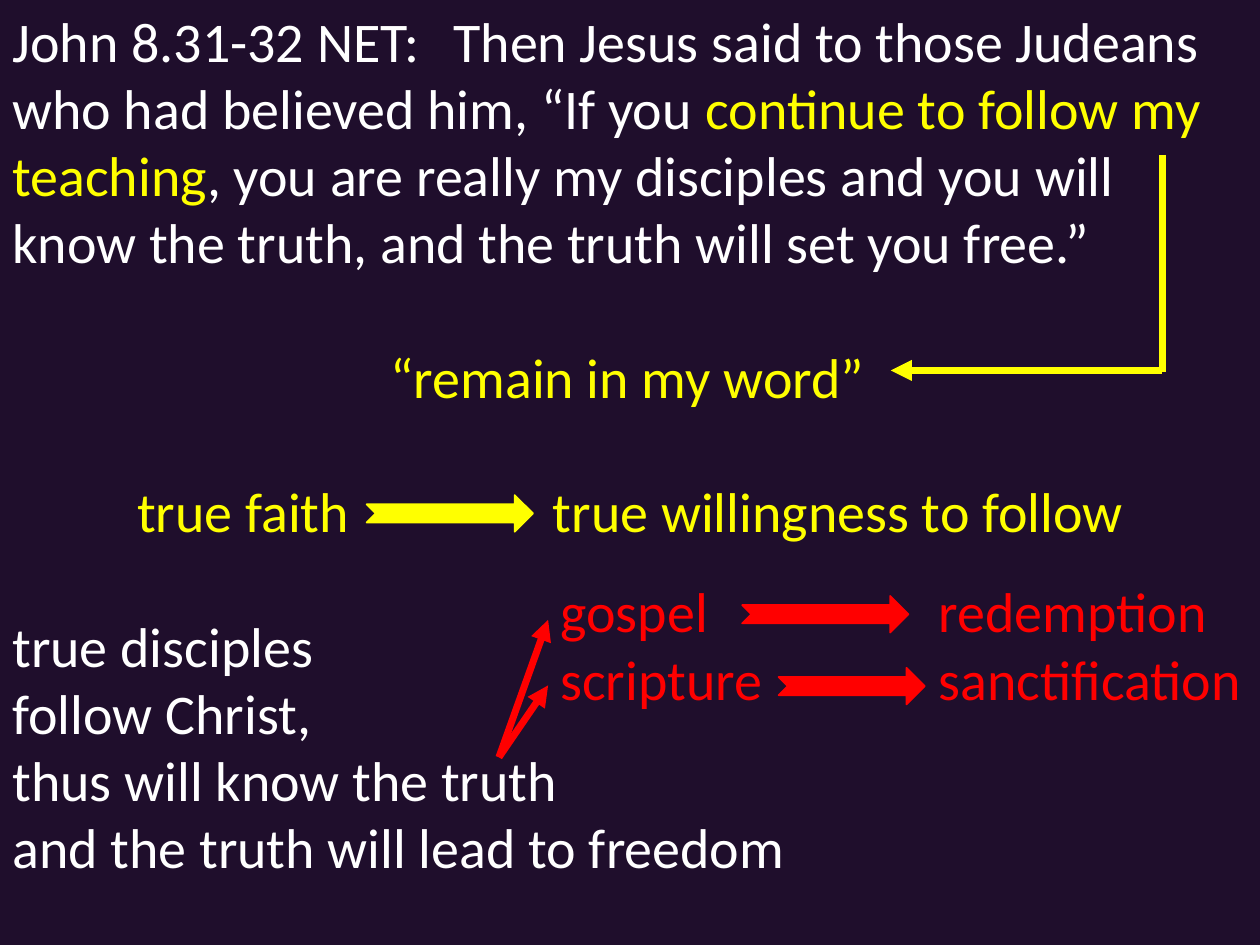
"""Build a one-page Bible study slide on John 8.31-32."""
from dataclasses import dataclass
from typing import Any, NamedTuple

from lxml.etree import SubElement
from pptx import Presentation
from pptx.dml.color import RGBColor
from pptx.enum.shapes import MSO_CONNECTOR, MSO_SHAPE
from pptx.enum.text import MSO_AUTO_SIZE
from pptx.oxml.ns import qn
from pptx.slide import Slide
from pptx.util import Pt

EMU_PER_PX = 9144


@dataclass(frozen=True)
class Theme:
    font: str = "Calibri"
    size: int = 32
    row_gap: float = 38.4
    stroke: int = 4
    outline: int = 1
    night: RGBColor = RGBColor(0x1F, 0x0E, 0x2C)
    white: RGBColor = RGBColor(0xFF, 0xFF, 0xFF)
    yellow: RGBColor = RGBColor(0xFF, 0xFF, 0x00)
    red: RGBColor = RGBColor(0xFF, 0x00, 0x00)


THEME = Theme()


class Span(NamedTuple):
    text: str
    color: RGBColor


class Para(NamedTuple):
    spans: tuple[Span, ...]
    rows_before: int = 0
    indent: int = 0


class TextBlock(NamedTuple):
    left: int
    top: int
    width: int
    height: int
    paras: tuple[Para, ...]


class Line(NamedTuple):
    x1: int
    y1: int
    x2: int
    y2: int
    color: RGBColor
    arrow: bool = True


class BlockArrow(NamedTuple):
    left: int
    top: int
    width: int
    height: int
    color: RGBColor


def plain(color: RGBColor, *texts: str) -> tuple[Para, ...]:
    """Make one single-colour paragraph for each text."""
    return tuple(Para((Span(text, color),)) for text in texts)


TEXT_BLOCKS = (
    TextBlock(0, 0, 1000, 710, (
        Para((
            Span("John 8.31-32 NET:\tThen Jesus said to those Judeans "
                 "who had believed him, “If you ", THEME.white),
            Span("continue to follow my teaching", THEME.yellow),
            Span(", you are really my disciples and you will know the truth, "
                 "and the truth will set you free.”", THEME.white),
        )),
        Para((Span("“remain in my word”", THEME.yellow),), 1, indent=300),
        Para((Span("true disciples", THEME.white),), 3),
        *plain(THEME.white, "follow Christ,", "thus will know the truth",
               "and the truth will lead to freedom"),
    )),
    TextBlock(99, 373, 200, 63, plain(THEME.yellow, "true faith")),
    TextBlock(429, 373, 490, 63, plain(THEME.yellow, "true willingness to follow")),
    TextBlock(435, 453, 190, 118, plain(THEME.red, "gospel", "scripture")),
    TextBlock(735, 453, 265, 118, plain(THEME.red, "redemption", "sanctification")),
)

LINES = (
    Line(923, 123, 923, 295, THEME.yellow, arrow=False),
    Line(922, 294, 707, 294, THEME.yellow),
    Line(396, 601, 435, 492, THEME.red),
    Line(396, 601, 435, 544, THEME.red),
)

BLOCK_ARROWS = (
    BlockArrow(291, 393, 132, 29, THEME.yellow),
    BlockArrow(589, 473, 132, 29, THEME.red),
    BlockArrow(618, 530, 116, 29, THEME.red),
)


def px(*lengths: int) -> list[int]:
    """Turn pixel lengths into EMU."""
    return [length * EMU_PER_PX for length in lengths]


def apply(target: Any, values: dict[str, Any]) -> None:
    """Set each named attribute on the target."""
    for name, value in values.items():
        setattr(target, name, value)


def draw_text(page: Slide, block: TextBlock) -> None:
    """Draw a wrapped text box with its paragraphs."""
    frame = page.shapes.add_textbox(*px(*block[:4])).text_frame
    apply(frame, {"word_wrap": True, "auto_size": MSO_AUTO_SIZE.SHAPE_TO_FIT_TEXT})
    for index, item in enumerate(block.paras):
        para = frame.add_paragraph() if index else frame.paragraphs[0]
        para.space_before = Pt(item.rows_before * THEME.row_gap)
        if item.indent:
            para._p.get_or_add_pPr().set("marL", str(item.indent * EMU_PER_PX))
        for text, color in item.spans:
            span = para.add_run()
            span.text = text
            apply(span.font, {"name": THEME.font, "size": Pt(THEME.size)})
            span.font.color.rgb = color


def draw_line(page: Slide, item: Line) -> None:
    """Draw a straight line, with an arrowhead at its end if asked."""
    line = page.shapes.add_connector(MSO_CONNECTOR.STRAIGHT, *px(*item[:4]))
    line.line.color.rgb = item.color
    line.line.width = Pt(THEME.stroke)
    if item.arrow:
        SubElement(line.line._get_or_add_ln(), qn("a:tailEnd"), type="triangle")
    SubElement(line._element.spPr, qn("a:effectLst"))


def draw_block_arrow(page: Slide, item: BlockArrow) -> None:
    """Draw a notched arrow in one colour."""
    arrow = page.shapes.add_shape(MSO_SHAPE.NOTCHED_RIGHT_ARROW, *px(*item[:4]))
    arrow.shadow.inherit = False
    arrow.fill.solid()
    arrow.fill.fore_color.rgb = item.color
    arrow.line.color.rgb = item.color
    arrow.line.width = Pt(THEME.outline)


def main() -> None:
    """Build and save the deck."""
    deck = Presentation()
    deck.slide_width, deck.slide_height = px(1000, 750)
    page = deck.slides.add_slide(deck.slide_layouts.get_by_name("Blank"))
    page.background.fill.solid()
    page.background.fill.fore_color.rgb = THEME.night
    for draw, items in (
        (draw_text, TEXT_BLOCKS),
        (draw_line, LINES),
        (draw_block_arrow, BLOCK_ARROWS),
    ):
        for item in items:
            draw(page, item)
    deck.save("out.pptx")


if __name__ == "__main__":
    main()
